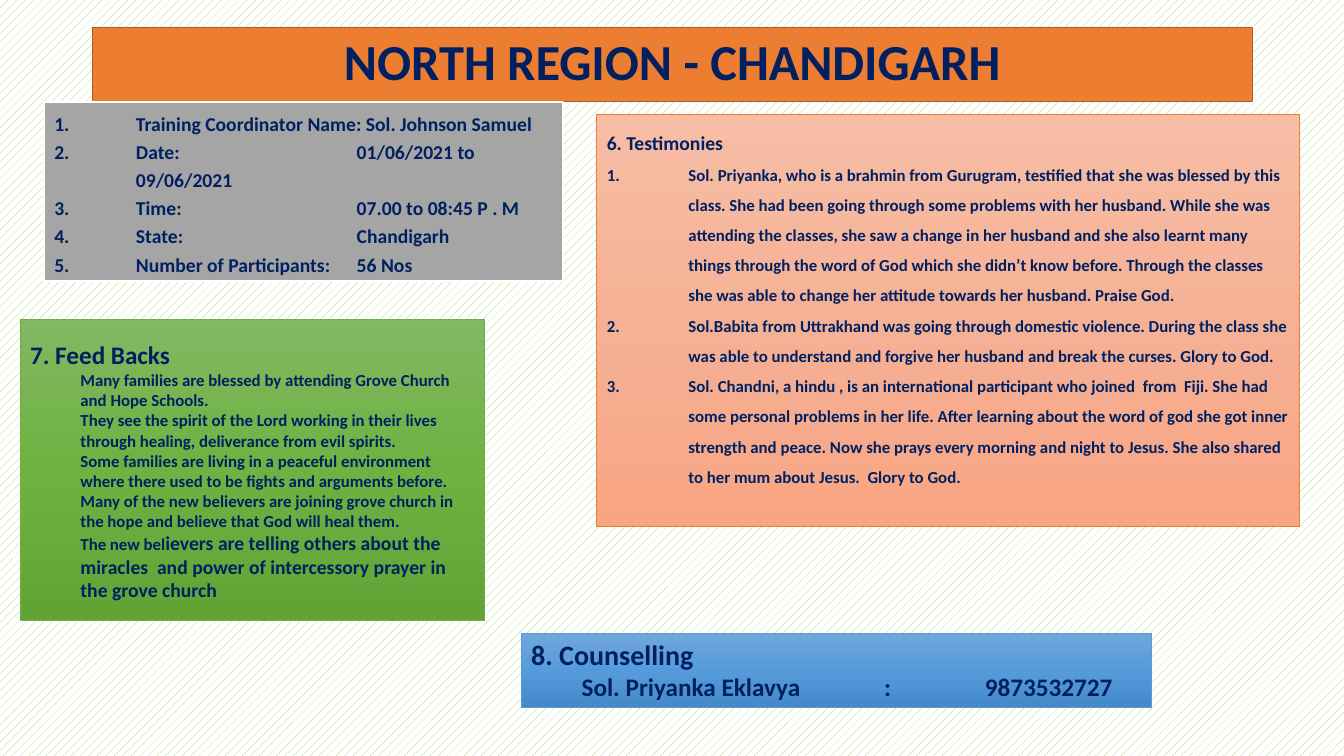
from copy import deepcopy

from lxml import etree
from pptx import Presentation
from pptx.dml.color import RGBColor
from pptx.enum.dml import MSO_PATTERN
from pptx.enum.shapes import MSO_SHAPE
from pptx.enum.text import MSO_ANCHOR, PP_ALIGN
from pptx.oxml.ns import qn
from pptx.util import Inches, Pt

RECT = MSO_SHAPE.RECTANGLE
HATCH = MSO_PATTERN.DASHED_UPWARD_DIAGONAL
TOP, MIDDLE = MSO_ANCHOR.TOP, MSO_ANCHOR.MIDDLE
LEFT, CENTER = PP_ALIGN.LEFT, PP_ALIGN.CENTER

FONT = "Calibri"
NAVY = RGBColor(0x00, 0x20, 0x60)
WHITE = RGBColor(0xFF, 0xFF, 0xFF)
LIME = RGBColor(0x92, 0xD0, 0x50)
GREY = RGBColor(0xA5, 0xA5, 0xA5)
ORANGE = RGBColor(0xED, 0x7D, 0x31)
RUST = RGBColor(0xAF, 0x5C, 0x24)
GREEN = RGBColor(0x70, 0xAD, 0x47)
BLUE = RGBColor(0x5B, 0x9B, 0xD5)
PEACH_BLEND = [RGBColor(0xF7, 0xBD, 0xA5), RGBColor(0xF5, 0xB1, 0x96), RGBColor(0xF8, 0xA5, 0x82)]
GREEN_BLEND = [RGBColor(0x81, 0xB8, 0x61), RGBColor(0x6F, 0xB2, 0x42), RGBColor(0x62, 0xA3, 0x36)]
BLUE_BLEND = [RGBColor(0x71, 0xA6, 0xDB), RGBColor(0x55, 0x9B, 0xDB), RGBColor(0x44, 0x8A, 0xCA)]

DETAILS = [
    "Training Coordinator Name: Sol. Johnson Samuel",
    "Date: \t\t01/06/2021 to 09/06/2021",
    "Time: \t\t07.00 to 08:45 P . M",
    "State: \t\tChandigarh",
    "Number of Participants:\t56 Nos",
]
TESTIMONIES = [
    "Sol. Priyanka, who is a brahmin from Gurugram, testified that she was blessed by this class. "
    "She had been going through some problems with her husband. While she was attending the classes, "
    "she saw a change in her husband and she also learnt many things through the word of God which "
    "she didn’t know before. Through the classes she was able to change her attitude towards her "
    "husband. Praise God.",
    "Sol.Babita from Uttrakhand was going through domestic violence. During the class she was able "
    "to understand and forgive her husband and break the curses. Glory to God.",
    "Sol. Chandni, a hindu , is an international participant who joined  from  Fiji. She had some "
    "personal problems in her life. After learning about the word of god she got inner strength and "
    "peace. Now she prays every morning and night to Jesus. She also shared to her mum about Jesus.  "
    "Glory to God.",
]
FEEDBACK = [
    "Many families are blessed by attending Grove Church and Hope Schools.",
    "They see the spirit of the Lord working in their lives through healing, deliverance from evil spirits.",
    "Some families are living in a peaceful environment where there used to be fights and arguments before.",
    "Many of the new believers are joining grove church in the hope and believe that God will heal them.",
]


class RegionSlide:
    """Holds the text style and the slide, and draws its title and panels."""

    def __init__(self, prs):
        self.font, self.color, self.tab = FONT, NAVY, Inches(1)
        self.s = prs.slides.add_slide(prs.slide_layouts[5])

    def background(self, fore, back):
        fill = self.s.background.fill
        fill.patterned()
        fill.pattern = HATCH
        fill.fore_color.rgb = fore
        fill.back_color.rgb = back

    def title(self, text, box, fill, line):
        sp = self.s.shapes.title
        sp.left, sp.top, sp.width, sp.height = [Inches(v) for v in box]
        self.paint(sp, [fill], line, 1)
        sp.text_frame.vertical_anchor = MIDDLE
        self.paragraph(sp.text_frame, [(text, 36)], spacing=0.9, align=CENTER)

    def panel(self, box, colors, line, width):
        sp = self.s.shapes.add_shape(RECT, *[Inches(v) for v in box])
        sp.shadow.inherit = False
        self.paint(sp, colors, line, width)
        tf = sp.text_frame
        tf.word_wrap = True
        tf.vertical_anchor = TOP
        return tf

    def paint(self, sp, colors, line, width):
        sp.line.color.rgb = line
        sp.line.width = Pt(width)
        if len(colors) == 1:
            sp.fill.solid()
            sp.fill.fore_color.rgb = colors[0]
            return
        sp.fill.gradient()
        sp.fill.gradient_angle = 270
        stops = sp._element.spPr.find(qn("a:gradFill")).find(qn("a:gsLst"))
        stops.insert(1, deepcopy(stops[0]))
        for i, (stop, color) in enumerate(zip(sp.fill.gradient_stops, colors)):
            stop.position = i / (len(colors) - 1)
            stop.color.rgb = color

    def paragraph(self, tf, runs, spacing=1.0, indent=0, numbered=False, align=LEFT):
        p = tf.paragraphs[0]
        if p.runs:
            p = tf.add_paragraph()
        p.alignment = align
        p.line_spacing = spacing
        pPr = p._p.get_or_add_pPr()
        pPr.set("marL", str(Inches(indent)))
        pPr.set("indent", str(Inches(-indent if numbered else 0)))
        pPr.set("defTabSz", str(self.tab))
        if numbered:
            etree.SubElement(pPr, qn("a:buFont"), typeface="+mj-lt")
            etree.SubElement(pPr, qn("a:buAutoNum"), type="arabicPeriod")
        for text, size in runs:
            r = p.add_run()
            r.text = text
            r.font.name, r.font.size, r.font.bold = self.font, Pt(size), True
            r.font.color.rgb = self.color


def main():
    prs = Presentation()
    prs.slide_width, prs.slide_height = Inches(13.33), Inches(7.5)
    region = RegionSlide(prs)
    region.background(LIME, WHITE)
    region.title("NORTH REGION - CHANDIGARH", (0.92, 0.27, 11.5, 0.74), ORANGE, RUST)

    tf = region.panel((0.44, 1.01, 5.14, 1.78), [GREY], WHITE, 1.5)
    for text in DETAILS:
        region.paragraph(tf, [(text, 14)], 1.2, 0.81, True)

    tf = region.panel((5.92, 1.13, 6.97, 4.09), PEACH_BLEND, ORANGE, 0.5)
    region.paragraph(tf, [("6. Testimonies", 14)], 1.5)
    for text in TESTIMONIES:
        region.paragraph(tf, [(text, 12)], 1.5, 0.81, True)

    tf = region.panel((0.2, 3.17, 4.6, 2.98), GREEN_BLEND, GREEN, 0.5)
    region.paragraph(tf, [("7. Feed Backs", 18)], 1.5)
    for text in FEEDBACK:
        region.paragraph(tf, [(text, 12)], indent=0.5)
    region.paragraph(tf, [
        ("The new bel", 12),
        ("ievers are telling others about the miracles  and power of intercessory prayer "
         "in the grove church", 14),
    ], indent=0.5)

    tf = region.panel((5.17, 6.28, 6.25, 0.74), BLUE_BLEND, BLUE, 0.5)
    region.paragraph(tf, [("8. Counselling", 20)])
    region.paragraph(tf, [("Sol. Priyanka Eklavya\t:\t9873532727", 18)], indent=0.5)

    prs.save("out.pptx")


if __name__ == "__main__":
    main()
